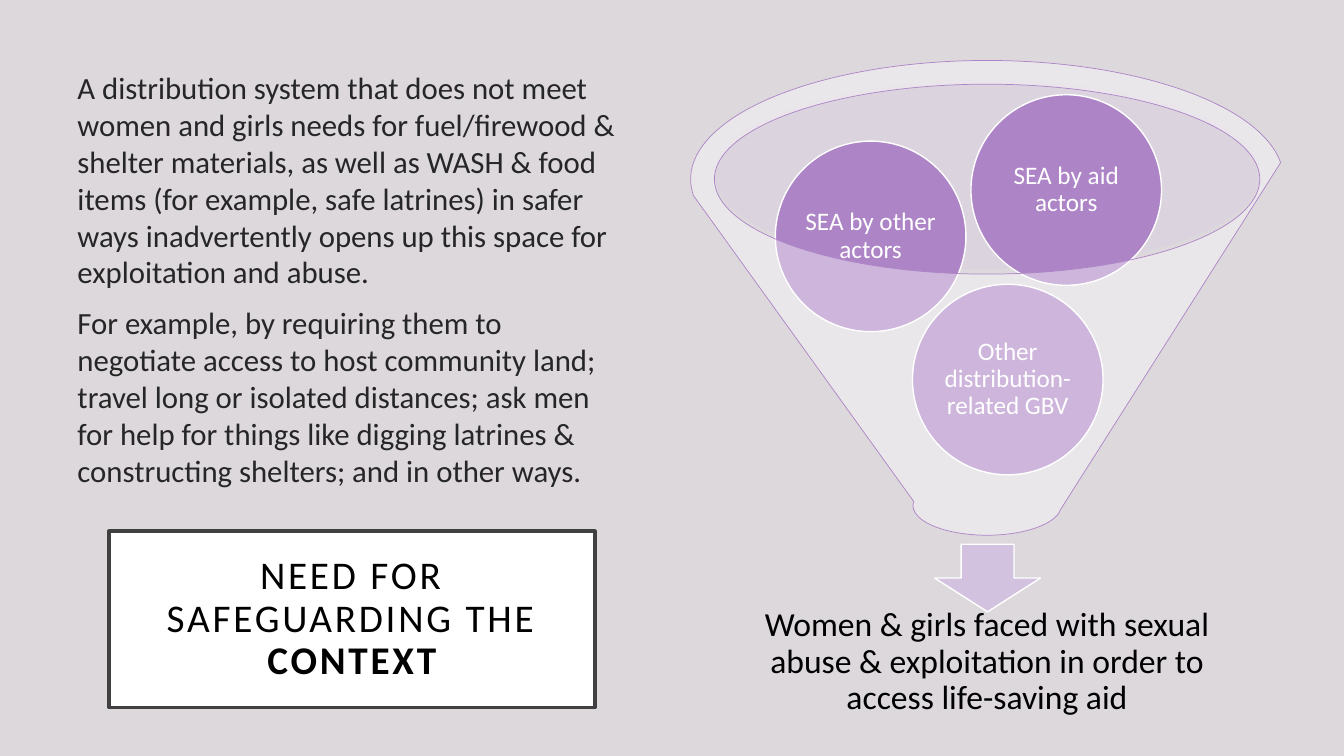
from lxml import etree
from pptx import Presentation
from pptx.dml.color import RGBColor
from pptx.enum.shapes import MSO_SHAPE
from pptx.enum.text import MSO_ANCHOR, PP_ALIGN
from pptx.oxml.ns import qn
from pptx.util import Pt

PX = 9144  # EMU per px, 100 px to the inch
FONT = "Calibri"
RECTANGLE, ELLIPSE = MSO_SHAPE.RECTANGLE, MSO_SHAPE.OVAL
DOWN_ARROW, FUNNEL = MSO_SHAPE.DOWN_ARROW, MSO_SHAPE.FUNNEL
TOP, MIDDLE = MSO_ANCHOR.TOP, MSO_ANCHOR.MIDDLE
LEFT, CENTER = PP_ALIGN.LEFT, PP_ALIGN.CENTER

COLORS = {
    "background": "DCD8DC", "white": "FFFFFF", "black": "000000",
    "body": "262626", "frame": "404040", "purple": "AD84C6",
    "mouth": "DBCEE5", "arrow": "D3C2DF",
}

TITLE = ["NEED FOR SAFEGUARDING THE ", "CONTEXT"]
BODY = [
    "A distribution system that does not meet women and girls needs for "
    "fuel/firewood & shelter materials, as well as WASH & food items (for "
    "example, safe latrines) in safer ways inadvertently opens up this space "
    "for exploitation and abuse.",
    "For example, by requiring them to negotiate access to host community "
    "land; travel long or isolated distances; ask men for help for things "
    "like digging latrines & constructing shelters; and in other ways.",
]
OUTCOME = ("Women & girls faced with sexual abuse & exploitation in order to "
           "access life-saving aid")
CIRCLES = [  # text, left, top
    ("Other distribution-related GBV", 905, 282),
    ("SEA by other actors", 769, 140),
    ("SEA by aid actors", 963, 94),
]
CIRCLE_SIZE = 189
CIRCLE_TEXT_INSET = 24  # from the circle's edge to its text


def rgb(name):
    return RGBColor.from_string(COLORS[name])


def scale(*lengths):
    return [length * PX for length in lengths]


def add_shape(slide, kind, box, fill, line=None, width=1, opacity=100):
    shape = slide.shapes.add_shape(kind, *scale(*box))
    shape.shadow.inherit = False
    shape.fill.solid()
    shape.fill.fore_color.rgb = rgb(fill)
    if opacity < 100:
        color = shape.fill._xPr.find(qn("a:solidFill"))[0]
        etree.SubElement(color, qn("a:alpha"), val=str(opacity * 1000))
    if line:
        shape.line.color.rgb = rgb(line)
        shape.line.width = Pt(width)
    else:
        shape.line.fill.background()
    return shape


def set_text(shape, paragraphs, size, color, inset, anchor=MIDDLE,
             align=CENTER, line_spacing=0.9, space_before=0):
    """Fill a shape with paragraphs, each a list of runs."""
    frame = shape.text_frame
    frame.word_wrap = True
    frame.vertical_anchor = anchor
    (frame.margin_left, frame.margin_top,
     frame.margin_right, frame.margin_bottom) = scale(*inset)
    for index, runs in enumerate(paragraphs):
        paragraph = frame.add_paragraph() if index else frame.paragraphs[0]
        paragraph.alignment = align
        paragraph.line_spacing = line_spacing
        paragraph.space_before = Pt(space_before)
        for text in runs:
            run = paragraph.add_run()
            run.text = text
            run.font.name = FONT
            run.font.size = Pt(size)
            run.font.color.rgb = rgb(color)


def add_text(slide, box, *args, **options):
    set_text(slide.shapes.add_textbox(*scale(*box)), *args, **options)


def add_title(slide):
    title = add_shape(slide, RECTANGLE, (108, 527, 482, 175), "white", "frame", 2.5)
    set_text(title, [TITLE], 28, "black", (20, 20, 20, 20))
    runs = title.text_frame.paragraphs[0].runs
    runs[-1].font.bold = True
    for run in runs:
        run.font._element.set("spc", "200")


def add_funnel(slide):
    add_shape(slide, ELLIPSE, (708, 79, 542, 188), "mouth", opacity=40)
    add_shape(slide, DOWN_ARROW, (927, 540, 105, 67), "arrow", "white")
    add_text(slide, (727, 594, 504, 126), [[OUTCOME]], 24, "black",
             (19, 19, 19, 19))
    text_size = CIRCLE_SIZE - 2 * CIRCLE_TEXT_INSET
    for text, left, top in CIRCLES:
        add_shape(slide, ELLIPSE, (left, top, CIRCLE_SIZE, CIRCLE_SIZE),
                  "purple", "white")
        box = (left + CIRCLE_TEXT_INSET, top + CIRCLE_TEXT_INSET,
               text_size, text_size)
        add_text(slide, box, [[text]], 18, "white", (3, 3, 3, 3))
    add_shape(slide, FUNNEL, (685, 60, 588, 471), "white", "purple", 0.5, 40)


def main():
    presentation = Presentation()
    presentation.slide_width, presentation.slide_height = scale(1333, 750)
    slide = presentation.slides.add_slide(presentation.slide_layouts[6])
    slide.background.fill.solid()
    slide.background.fill.fore_color.rgb = rgb("background")
    add_title(slide)
    add_text(slide, (67, 63, 565, 481), [[text] for text in BODY], 22, "body",
             (10, 5, 10, 5), anchor=TOP, align=LEFT, line_spacing=1,
             space_before=10)
    add_funnel(slide)
    presentation.save("out.pptx")


if __name__ == "__main__":
    main()
